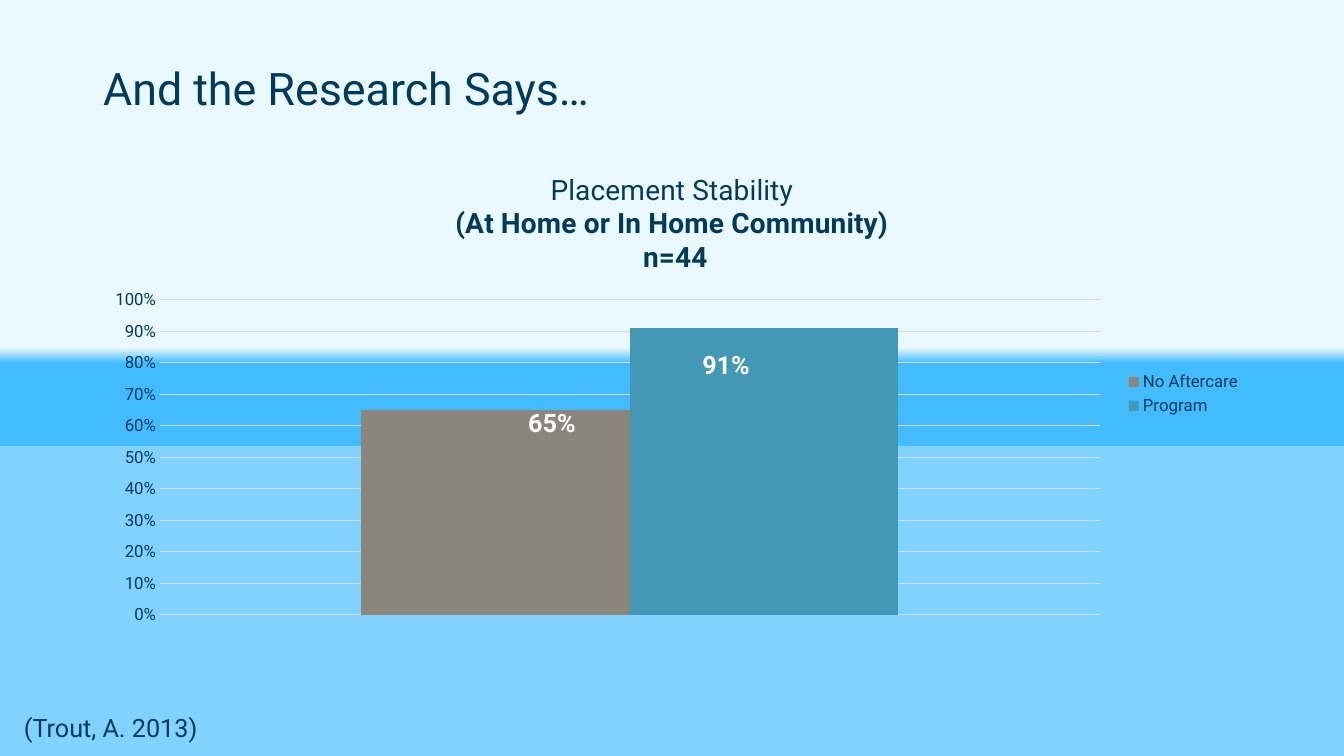
from lxml.etree import SubElement
from pptx import Presentation
from pptx.chart.data import CategoryChartData
from pptx.dml.color import RGBColor
from pptx.enum.chart import XL_CHART_TYPE as ChartType, XL_LEGEND_POSITION as LegendSide, XL_TICK_MARK as Tick
from pptx.enum.text import MSO_ANCHOR as Anchor, PP_ALIGN as Align
from pptx.oxml.ns import qn
from pptx.util import Emu, Pt

PX_PER_INCH = 100.8
NAVY = "003B5C"
WHITE = "FFFFFF"
FONT = "Roboto"


def px(length):
    return Emu(round(length * 914400 / PX_PER_INCH))


def color(hex_text):
    return RGBColor.from_string(hex_text)


def style(font, size, hex_text, bold=False):
    font.name = FONT
    font.size = Pt(size)
    font.bold = bold
    font.color.rgb = color(hex_text)


def paint_background(page, stops):
    page.background.fill.gradient()
    gradient = page.element.find(".//" + qn("a:gradFill"))
    stop_list = gradient.find(qn("a:gsLst"))
    for old_stop in list(stop_list):
        stop_list.remove(old_stop)
    for percent, hex_text in stops:
        stop = SubElement(stop_list, qn("a:gs"), pos=str(percent * 1000))
        SubElement(stop, qn("a:srgbClr"), val=hex_text)
    gradient.find(qn("a:lin")).set("ang", "5400000")


def place_title(page, box, text):
    title = page.shapes.title
    title.left, title.top, title.width, title.height = map(px, box)
    frame = title.text_frame
    frame.text = text
    frame.word_wrap = True
    frame.vertical_anchor = Anchor.MIDDLE
    para = frame.paragraphs[0]
    para.alignment = Align.LEFT
    para.line_spacing = 0.9
    style(para.runs[0].font, 32, NAVY)


def add_label(page, box, text, hex_text, bold=False, align=Align.LEFT):
    frame = page.shapes.add_textbox(*map(px, box)).text_frame
    frame.word_wrap = True
    frame.text = text
    para = frame.paragraphs[0]
    para.alignment = align
    style(para.runs[0].font, 18, hex_text, bold)


def set_layout(parent, **settings):
    layout = parent.find(qn("c:layout"))
    if layout is None:
        layout = SubElement(parent, qn("c:layout"))
        parent.insert(0, layout)
    manual = SubElement(layout, qn("c:manualLayout"))
    for name, value in settings.items():
        SubElement(manual, qn("c:" + name), val=str(value))


def add_stability_chart(page, box, groups):
    data = CategoryChartData(number_format="0%")
    data.categories = ["1"]
    for name, share, _ in groups:
        data.add_series(name, [share])
    chart = page.shapes.add_chart(ChartType.COLUMN_CLUSTERED, *map(px, box), data).chart
    style(chart.font, 12, NAVY)
    left, top, width, height = box

    chart.has_title = True
    heading = chart.chart_title.text_frame
    heading.text = "Placement Stability \n(At Home or In Home Community) \nn=44"
    for index, para in enumerate(heading.paragraphs):
        style(para.runs[0].font, 20, NAVY, bold=index > 0)
    set_layout(chart.chart_title._element, xMode="edge", yMode="edge", x=0.31, y=15 / height)

    plot = chart.plots[0]
    plot.gap_width = 150
    plot.overlap = 0
    plot.vary_by_categories = False
    for series, (_, _, hex_text) in zip(plot.series, groups):
        series.format.fill.solid()
        series.format.fill.fore_color.rgb = color(hex_text)
    plot_area = chart.element.find(".//" + qn("c:plotArea"))
    set_layout(
        plot_area, layoutTarget="inner", xMode="edge", yMode="edge",
        x=67 / width, y=146 / height, w=940 / width, h=315 / height,
    )

    chart.category_axis.visible = False
    axis = chart.value_axis
    axis.minimum_scale = 0
    axis.maximum_scale = 1
    axis.major_unit = 0.1
    axis.major_tick_mark = axis.minor_tick_mark = Tick.NONE
    axis.format.line.fill.background()
    axis.tick_labels.number_format = "0%"
    axis.tick_labels.number_format_is_linked = False
    style(axis.tick_labels.font, 12, NAVY)
    axis.has_major_gridlines = True
    grid_line = axis.major_gridlines.format.line
    grid_line.width = Pt(0.75)
    grid_line.color.rgb = color("D9D9D9")

    chart.has_legend = True
    chart.legend.position = LegendSide.RIGHT
    chart.legend.include_in_layout = False
    style(chart.legend.font, 12, NAVY)

    for text, x, y in (("65%", 412, 248), ("91%", 586, 190)):
        add_label(page, (left + x, top + y, 94, 49), text, WHITE, True, Align.CENTER)


def main():
    deck = Presentation()
    deck.slide_width = px(1344)
    deck.slide_height = px(756)
    page = deck.slides.add_slide(deck.slide_layouts[5])
    paint_background(page, [(46, "EAF8FF"), (48, "43BCFF"), (59, "43BCFF"), (59, "82D2FF")])
    place_title(page, (93, 40, 1159, 101), "And the Research Says…")
    groups = [("No Aftercare", 0.65, "8C857B"), ("Program", 0.91, "4298B5")]
    add_stability_chart(page, (93, 154, 1159, 480), groups)
    add_label(page, (14, 707, 564, 40), "(Trout, A. 2013)", NAVY)
    deck.save("out.pptx")


if __name__ == "__main__":
    main()
